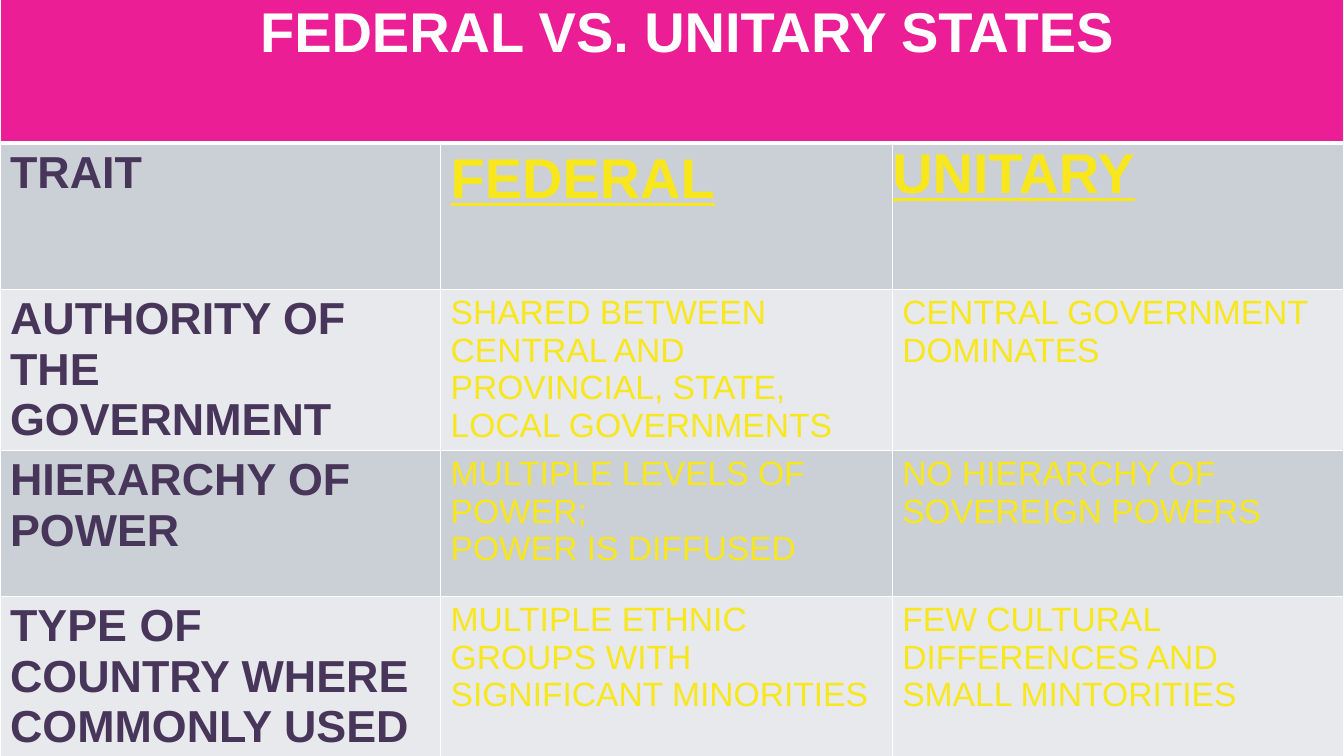
import pptx
import pptx.util
import pptx.dml.color
import pptx.enum.text
import pptx.oxml.ns
import lxml.etree

COLORS = {"title": "EB1E95", "dark_band": "CBD0D6", "light_band": "E7E9EC",
          "white": "FFFFFF", "trait": "48365A", "yellow": "F8E71C"}
TITLE = "FEDERAL VS. UNITARY STATES"
ROWS = [
    ("TRAIT", "FEDERAL", "UNITARY"),
    ("AUTHORITY OF THE GOVERNMENT",
     "SHARED BETWEEN CENTRAL AND PROVINCIAL, STATE, LOCAL GOVERNMENTS",
     "CENTRAL GOVERNMENT DOMINATES"),
    ("HIERARCHY OF POWER",
     "MULTIPLE LEVELS OF POWER;\nPOWER IS DIFFUSED",
     "NO HIERARCHY OF SOVEREIGN POWERS"),
    ("TYPE OF COUNTRY WHERE COMMONLY USED",
     "MULTIPLE ETHNIC GROUPS WITH SIGNIFICANT MINORITIES",
     "FEW CULTURAL DIFFERENCES AND SMALL MINTORITIES"),
]
COL_WIDTHS = [4.37, 4.48, 4.48]
ROW_HEIGHTS = [1.45] * 4 + [1.4]


def write(cell, text, size, color, bold=False, underline=False, align=None):
    tf = cell.text_frame
    for i, line in enumerate(text.split("\n")):
        p = tf.add_paragraph() if i else tf.paragraphs[0]
        p.alignment = align
        r = p.add_run()
        r.text = line
        r.font.name = "Arial"
        r.font.size = pptx.util.Pt(size)
        r.font.bold = bold
        r.font.underline = underline
        r.font.color.rgb = pptx.dml.color.RGBColor.from_string(COLORS[color])


def style(cell, fill, top=1, bottom=1):
    """Fill the cell and rule its four sides in white; widths are in points."""
    tcPr = cell._tc.get_or_add_tcPr()
    qn = pptx.oxml.ns.qn
    for side, width in (("L", 1), ("R", 1), ("T", top), ("B", bottom)):
        ln = lxml.etree.SubElement(tcPr, qn(f"a:ln{side}"), w=str(pptx.util.Pt(width)))
        solid = lxml.etree.SubElement(ln, qn("a:solidFill"))
        lxml.etree.SubElement(solid, qn("a:srgbClr"), val=COLORS["white"])
    cell.fill.solid()
    cell.fill.fore_color.rgb = pptx.dml.color.RGBColor.from_string(COLORS[fill])


prs = pptx.Presentation()
prs.slide_width = pptx.util.Inches(13.33)
prs.slide_height = pptx.util.Inches(7.5)
s = prs.slides.add_slide(prs.slide_layouts[6])

table = s.shapes.add_table(
    len(ROW_HEIGHTS), len(COL_WIDTHS), 0, pptx.util.Inches(-0.03),
    prs.slide_width, pptx.util.Inches(sum(ROW_HEIGHTS))).table
for column, width in zip(table.columns, COL_WIDTHS):
    column.width = pptx.util.Inches(width)
for row, height in zip(table.rows, ROW_HEIGHTS):
    row.height = pptx.util.Inches(height)

# Title band across all columns, its text set slightly right of centre
for c in range(len(COL_WIDTHS)):
    style(table.cell(0, c), "title", bottom=3)
title = table.cell(0, 0)
title.merge(table.cell(0, len(COL_WIDTHS) - 1))
title.margin_left = pptx.util.Inches(0.4)
write(title, TITLE, 40, "white", bold=True, align=pptx.enum.text.PP_ALIGN.CENTER)

# Comparison rows in alternating bands
for r, texts in enumerate(ROWS, start=1):
    heading = r == 1
    for c, text in enumerate(texts):
        cell = table.cell(r, c)
        style(cell, "dark_band" if r % 2 else "light_band", top=3 if heading else 1)
        if c == 0:
            write(cell, text, 32, "trait", bold=True)
        else:
            write(cell, text, 40 if heading else 24, "yellow",
                  bold=heading, underline=heading)

unitary = table.cell(1, 2)
unitary.margin_left = unitary.margin_right = unitary.margin_top = 0

prs.save("out.pptx")
